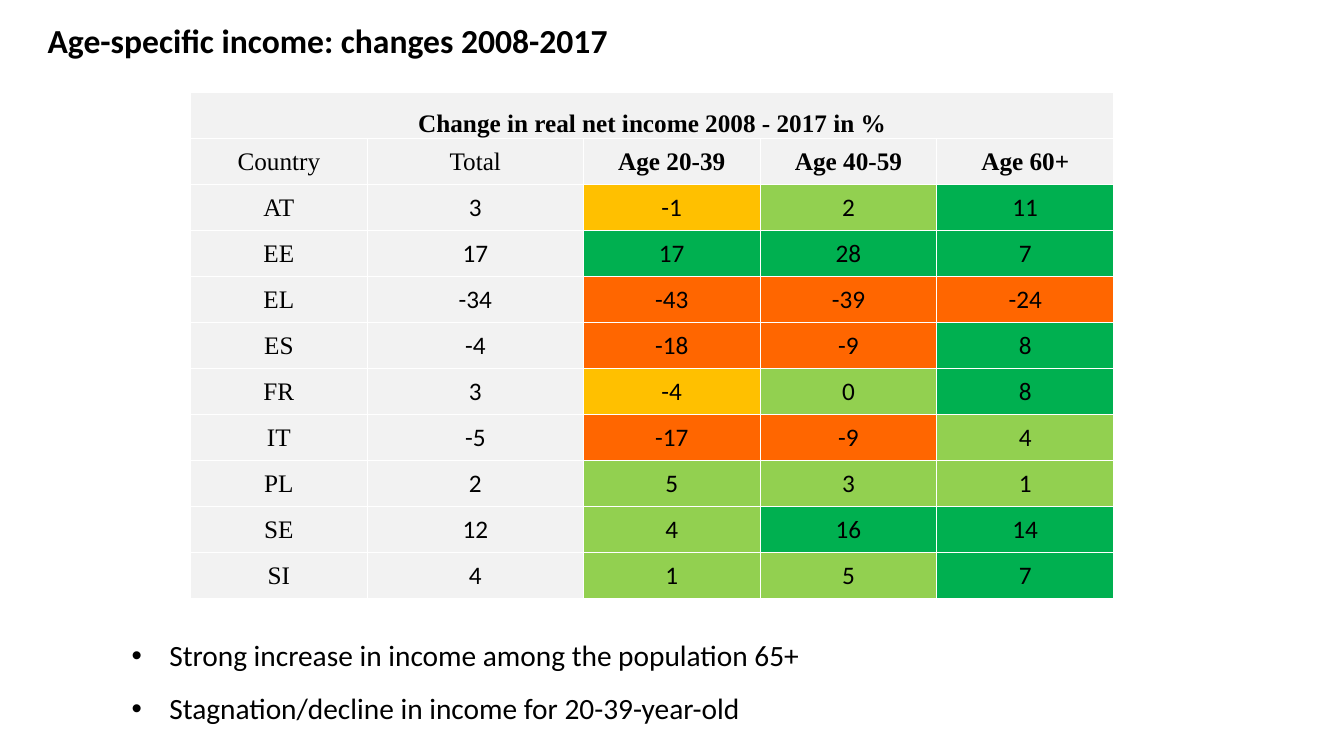
from lxml import etree
from pptx import Presentation
from pptx import util as u
from pptx.dml.color import RGBColor
from pptx.enum import text
from pptx.oxml import ns

COLOURS = {
    "black": "000000", "white": "FFFFFF", "grey": "F2F2F2",
    "loss": "FF6600", "dip": "FFC000", "gain": "92D050", "rise": "00B050",
}
SANS, SERIF = "Calibri", "Times New Roman"


def write(paragraph, words, size=24, font=SANS, bold=False, align=None,
          spacing=None, indent=0, hanging=0, bullet=None):
    """Put formatted text into a paragraph; indents are in cm."""
    run = paragraph.add_run()
    run.text = words
    run.font.size, run.font.name, run.font.bold = u.Pt(size), font, bold
    run.font.color.rgb = RGBColor.from_string(COLOURS["black"])
    paragraph.alignment = align
    if spacing:
        paragraph.line_spacing = spacing
    props = paragraph._p.get_or_add_pPr()
    props.set("marL", str(u.Cm(indent)))
    props.set("indent", str(u.Cm(-hanging)))
    if bullet:
        etree.SubElement(props, ns.qn("a:buFont"), typeface="Arial")
        etree.SubElement(props, ns.qn("a:buChar"), char=bullet)


prs = Presentation()
prs.slide_width, prs.slide_height = u.Cm(45.16), u.Cm(25.4)
slide = prs.slides.add_slide(prs.slide_layouts[6])

# Title
title = slide.shapes.add_textbox(0, 0, prs.slide_width, u.Cm(2.69)).text_frame
title.word_wrap = True
title.vertical_anchor = text.MSO_ANCHOR.MIDDLE
write(title.paragraphs[0], "Age-specific income: changes 2008-2017",
      size=32, bold=True, indent=1.35)

# Income changes by country: total, then the three age groups
heading = "Change in real net income 2008 - 2017 in %"
columns = ["Country", "Total", "Age 20-39", "Age 40-59", "Age 60+"]
changes = [
    ("AT", 3, -1, 2, 11),
    ("EE", 17, 17, 28, 7),
    ("EL", -34, -43, -39, -24),
    ("ES", -4, -18, -9, 8),
    ("FR", 3, -4, 0, 8),
    ("IT", -5, -17, -9, 4),
    ("PL", 2, 5, 3, 1),
    ("SE", 12, 4, 16, 14),
    ("SI", 4, 1, 5, 7),
]
rows = [[heading, "", "", "", ""], columns, *changes]

income = slide.shapes.add_table(len(rows), len(columns), u.Cm(6.4), u.Cm(3.1),
                                u.Cm(31.02), u.Cm(17)).table
income.first_row = income.horz_banding = False
for column, width in zip(income.columns, [5.94, 7.26, 5.94, 5.94, 5.94]):
    column.width = u.Cm(width)

for r, row in enumerate(rows):
    for c, value in enumerate(row):
        cell = income.cell(r, c)
        cell.margin_left = cell.margin_right = cell.margin_top = u.Cm(0.03)
        cell.margin_bottom = 0
        cell.vertical_anchor = (text.MSO_ANCHOR.MIDDLE if r
                                else text.MSO_ANCHOR.BOTTOM)

        # White grid lines
        for side in ("lnL", "lnR", "lnT", "lnB"):
            border = etree.SubElement(cell._tc.get_or_add_tcPr(),
                                      ns.qn(f"a:{side}"), w=str(u.Pt(1)))
            line_fill = etree.SubElement(border, ns.qn("a:solidFill"))
            etree.SubElement(line_fill, ns.qn("a:srgbClr"),
                             val=COLOURS["white"])

        # Age groups are shaded by the size of the change
        shade = "grey"
        if r > 1 and c > 1:
            shade = ("loss" if value < -5 else "dip" if value < 0
                     else "gain" if value <= 5 else "rise")
        cell.fill.solid()
        cell.fill.fore_color.rgb = RGBColor.from_string(COLOURS[shade])

        if value != "":
            write(cell.text_frame.paragraphs[0], str(value),
                  font=SERIF if r < 2 or c == 0 else SANS,
                  bold=r == 0 or (r == 1 and c > 1),
                  align=text.PP_ALIGN.CENTER)
income.cell(0, 0).merge(income.cell(0, len(columns) - 1))

# Findings
findings = slide.shapes.add_textbox(u.Cm(4.17), u.Cm(20.7),
                                    u.Cm(31.19), u.Cm(3.63)).text_frame
findings.word_wrap = True
for i, finding in enumerate(["Strong increase in income among the population 65+",
                             "Stagnation/decline in income for 20-39-year-old"]):
    paragraph = findings.add_paragraph() if i else findings.paragraphs[0]
    write(paragraph, finding, size=28, spacing=1.5,
          indent=1.27, hanging=1.27, bullet="•")

prs.save("out.pptx")
